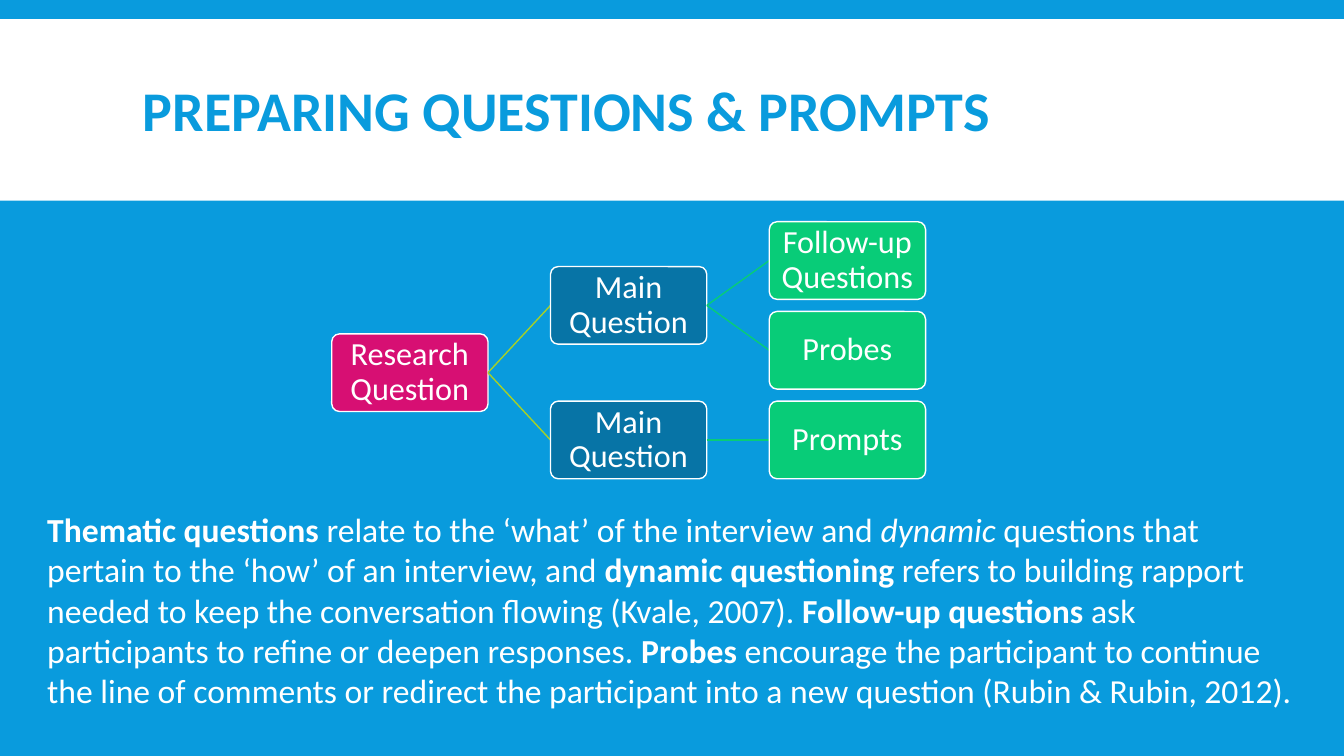
import pptx
import pptx.dml.color
import pptx.enum.shapes
import pptx.enum.text
import pptx.util
from lxml import etree

Inches = pptx.util.Inches
Pt = pptx.util.Pt
ANCHOR = pptx.enum.text.MSO_ANCHOR
SHAPE = pptx.enum.shapes.MSO_SHAPE
BLUE, WHITE, PINK, TEAL, GREEN, LIME = "099BDD", "FFFFFF", "D70F73", "0774A6", "08CC78", "A5D028"


def paint(color_format, value):
    color_format.rgb = pptx.dml.color.RGBColor.from_string(value)


def add_span(para, text, size, color, bold=False, italic=False):
    span = para.add_run()
    span.text = text
    span.font.name = "Calibri"
    span.font.size = Pt(size)
    span.font.bold = bold
    span.font.italic = italic
    paint(span.font.color, color)


deck = pptx.Presentation()
deck.slide_width = Inches(13.33)
deck.slide_height = Inches(7.5)
page = deck.slides.add_slide(deck.slide_layouts[6])
page.background.fill.solid()
paint(page.background.fill.fore_color, BLUE)

band = page.shapes.add_shape(SHAPE.RECTANGLE, 0, Inches(0.19), deck.slide_width, Inches(1.8))
band.shadow.inherit = False
band.fill.solid()
paint(band.fill.fore_color, WHITE)
band.line.fill.background()

title = page.shapes.add_textbox(Inches(1.32), Inches(0.31), Inches(10.7), Inches(1.65)).text_frame
title.word_wrap = True
title.vertical_anchor = ANCHOR.MIDDLE
title.paragraphs[0].line_spacing = 0.85
add_span(title.paragraphs[0], "PREPARING QUESTIONS & PROMPTS", 40, BLUE, bold=True)

tree_left, tree_top = 3.29, 2.2
column_step, row_step = 2.17, 0.89
box_width, box_height = 1.55, 0.77
column_fills = [PINK, TEAL, GREEN]
link_colors = [LIME, GREEN]
nodes = [
    ("Research Question", 0, 1.25, None),
    ("Main Question", 1, 0.5, 0),
    ("Main Question", 1, 2, 0),
    ("Follow-up Questions", 2, 0, 1),
    ("Probes", 2, 1, 1),
    ("Prompts", 2, 2, 2),
]

for label, column, row, parent in nodes:
    left = tree_left + column * column_step
    top = tree_top + row * row_step
    if parent is not None:
        parent_middle = tree_top + nodes[parent][2] * row_step + box_height / 2
        link = page.shapes.add_connector(
            pptx.enum.shapes.MSO_CONNECTOR.STRAIGHT,
            Inches(left - column_step + box_width), Inches(parent_middle),
            Inches(left), Inches(top + box_height / 2))
        link.line.width = Pt(1)
        paint(link.line.color, link_colors[column - 1])
        etree.SubElement(link.element.spPr, pptx.oxml.ns.qn("a:effectLst"))

    box = page.shapes.add_shape(
        SHAPE.ROUNDED_RECTANGLE, Inches(left), Inches(top), Inches(box_width), Inches(box_height))
    box.adjustments[0] = 0.1
    box.shadow.inherit = False
    box.fill.solid()
    paint(box.fill.fore_color, column_fills[column])
    box.line.width = Pt(1)
    paint(box.line.color, WHITE)
    frame = box.text_frame
    frame.word_wrap = True
    frame.vertical_anchor = ANCHOR.MIDDLE
    frame.margin_left = frame.margin_right = Inches(0.04)
    frame.margin_top = frame.margin_bottom = Inches(0.04)
    para = frame.paragraphs[0]
    para.alignment = pptx.enum.text.PP_ALIGN.CENTER
    para.line_spacing = 0.9
    add_span(para, label, 23, WHITE)

summary = page.shapes.add_textbox(Inches(0.37), Inches(5), Inches(12.6), Inches(2.12)).text_frame
summary.word_wrap = True
summary_spans = [
    ("Thematic questions ", "bold"),
    ("relate to the ‘what’ of the interview and ", ""),
    ("dynamic ", "italic"),
    ("questions that pertain to the ‘how’ of an interview, and ", ""),
    ("dynamic questioning ", "bold"),
    ("refers to building rapport needed to keep the conversation flowing (Kvale, 2007). ", ""),
    ("Follow-up questions ", "bold"),
    ("ask participants to refine or deepen responses. ", ""),
    ("Probes ", "bold"),
    ("encourage the participant to continue the line of comments or redirect "
     "the participant into a new question (Rubin & Rubin, 2012).", ""),
]
for text, style in summary_spans:
    add_span(summary.paragraphs[0], text, 24, WHITE, style == "bold", style == "italic")

deck.save("out.pptx")
